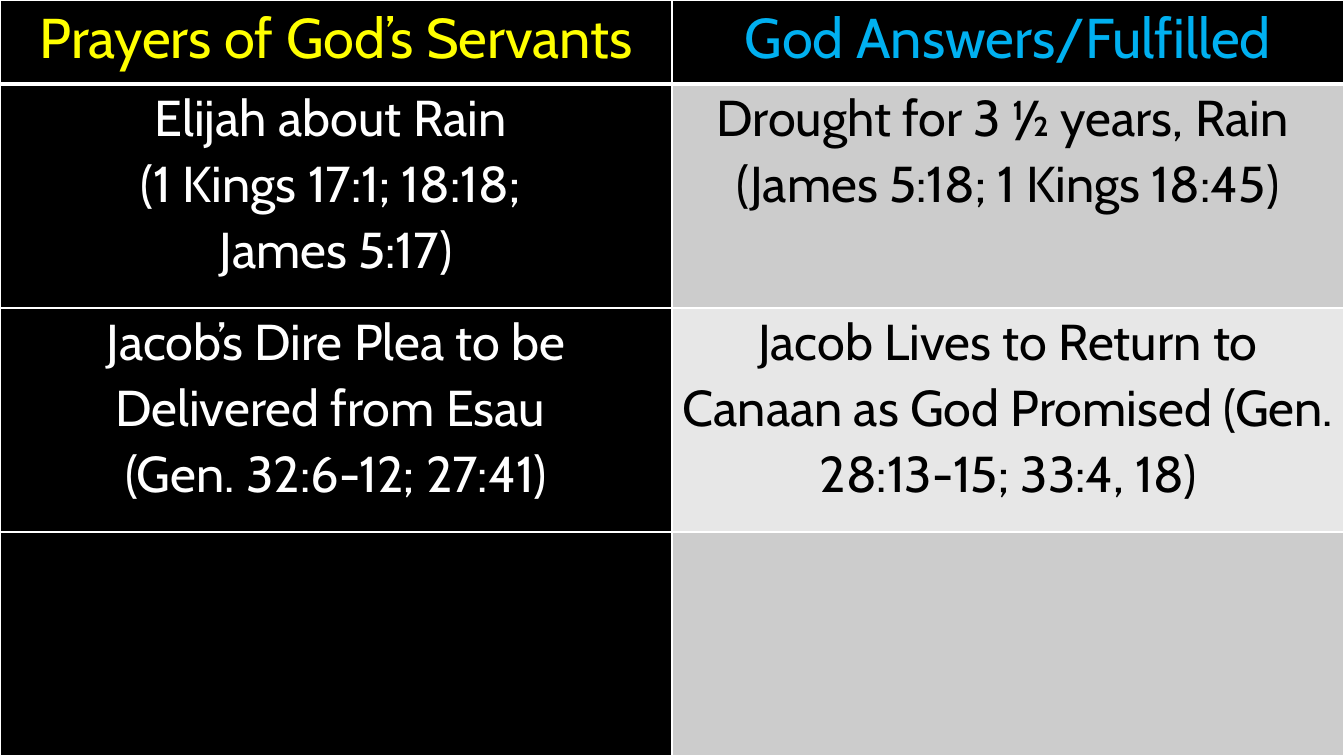
from lxml.etree import SubElement
from pptx import Presentation
from pptx.dml.color import RGBColor
from pptx.enum.text import PP_ALIGN
from pptx.oxml.ns import qn
from pptx.util import Pt

BLACK = RGBColor(0x00, 0x00, 0x00)
WHITE = RGBColor(0xFF, 0xFF, 0xFF)
YELLOW = RGBColor(0xFF, 0xFF, 0x00)
BLUE = RGBColor(0x00, 0xB0, 0xF0)
GRAY = RGBColor(0xCC, 0xCC, 0xCC)
LIGHT_GRAY = RGBColor(0xE7, 0xE7, 0xE7)

WIDTH, HEIGHT = 960, 540
HEADER_HEIGHT = 60
HEADERS = [("Prayers of God’s Servants", YELLOW), ("God Answers/Fulfilled", BLUE)]
PRAYERS = [
    (["Elijah about Rain ", "(1 Kings 17:1; 18:18; ", "James 5:17)"],
     ["Drought for 3 ½ years, Rain ", "(James 5:18; 1 Kings 18:45)"]),
    (["Jacob’s Dire Plea to be Delivered from Esau ", "(Gen. 32:6-12; 27:41)"],
     ["Jacob Lives to Return to Canaan as God Promised (Gen. 28:13-15; 33:4, 18)"]),
    ([], []),
]


class PrayerSlide:
    """Holds the text style and the current slide, and adds elements to it."""

    font = "Cabin"
    line_spacing = 1.07
    margin = 5

    def __init__(self, prs):
        self.s = prs.slides.add_slide(prs.slide_layouts[6])

    def background(self, color):
        fill = self.s.background.fill
        fill.solid()
        fill.fore_color.rgb = color

    def table(self, width, row_heights, columns):
        shape = self.s.shapes.add_table(
            len(row_heights), columns, 0, 0, Pt(width), Pt(sum(row_heights)))
        table = shape.table
        table.horz_banding = False
        for row, height in zip(table.rows, row_heights):
            row.height = Pt(height)
        for column in table.columns:
            column.width = Pt(width / columns)
        return table

    def borders(self, cell, top, bottom):
        tc_pr = cell._tc.get_or_add_tcPr()
        for side, weight in (("L", 1), ("R", 1), ("T", top), ("B", bottom)):
            line = SubElement(tc_pr, qn(f"a:ln{side}"), w=str(Pt(weight)))
            SubElement(SubElement(line, qn("a:solidFill")), qn("a:srgbClr"), val=str(WHITE))

    def cell(self, cell, lines, size, color, fill, top=1, bottom=1):
        self.borders(cell, top, bottom)
        cell.fill.solid()
        cell.fill.fore_color.rgb = fill
        cell.margin_left = cell.margin_right = Pt(self.margin)
        cell.margin_top = cell.margin_bottom = 0
        tf = cell.text_frame
        for i, text in enumerate(lines):
            p = tf.add_paragraph() if i else tf.paragraphs[0]
            p.alignment = PP_ALIGN.CENTER
            p.line_spacing = self.line_spacing
            r = p.add_run()
            r.text = text
            r.font.name = self.font
            r.font.size = Pt(size)
            r.font.bold = False
            r.font.color.rgb = color


def main():
    prs = Presentation()
    prs.slide_width, prs.slide_height = Pt(WIDTH), Pt(HEIGHT)
    slide = PrayerSlide(prs)
    slide.background(BLACK)
    row_height = (HEIGHT - HEADER_HEIGHT) / len(PRAYERS)
    table = slide.table(WIDTH, [HEADER_HEIGHT] + [row_height] * len(PRAYERS), len(HEADERS))
    for column, (text, color) in enumerate(HEADERS):
        slide.cell(table.cell(0, column), [text], 40, color, BLACK, bottom=3)
    for row, (prayer, answer) in enumerate(PRAYERS, start=1):
        top = 3 if row == 1 else 1
        band = GRAY if row % 2 else LIGHT_GRAY
        slide.cell(table.cell(row, 0), prayer, 36, WHITE, BLACK, top=top)
        slide.cell(table.cell(row, 1), answer, 36, BLACK, band, top=top)
    prs.save("out.pptx")


if __name__ == "__main__":
    main()
